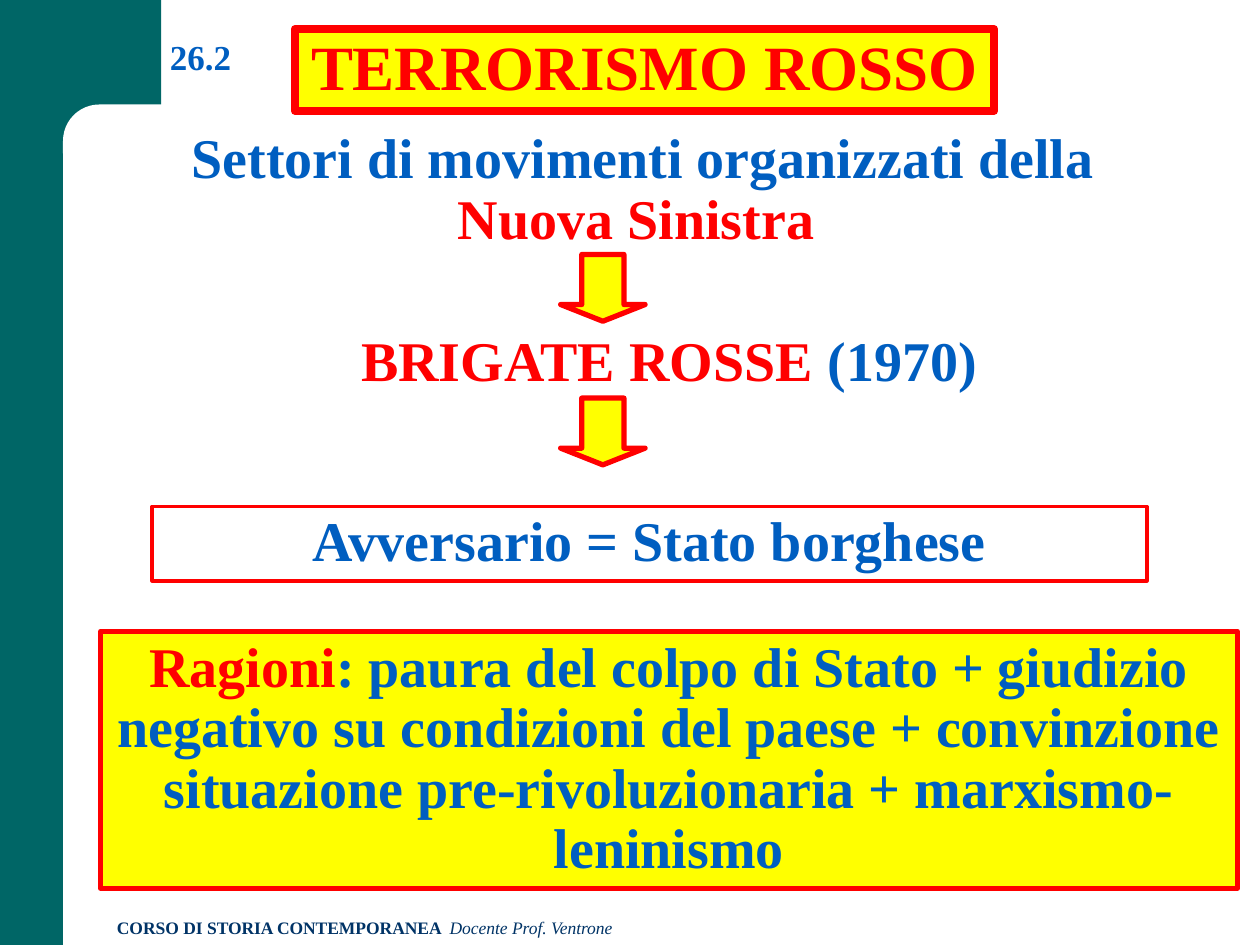
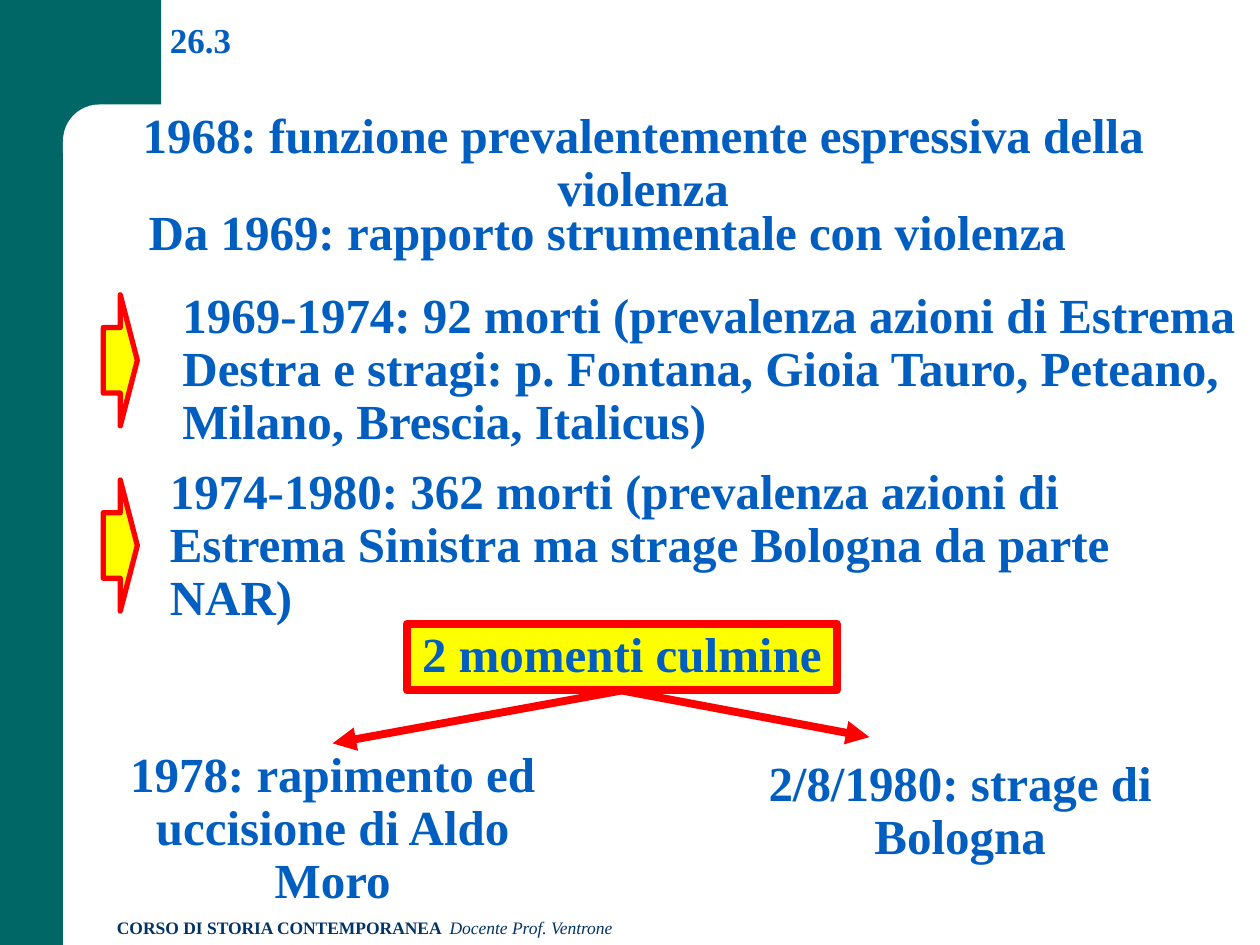
from dataclasses import dataclass

from lxml.etree import SubElement
from pptx import Presentation
from pptx.dml.color import RGBColor
from pptx.enum.shapes import MSO_CONNECTOR, MSO_SHAPE
from pptx.enum.text import MSO_ANCHOR, MSO_AUTO_SIZE, PP_ALIGN
from pptx.oxml.ns import qn
from pptx.util import Inches, Pt


@dataclass(frozen=True)
class Theme:
    font: str = "Times New Roman"
    white: str = "FFFFFF"
    teal: str = "006666"
    navy: str = "003366"
    blue: str = "005EC0"
    red: str = "FF0000"
    yellow: str = "FFFF00"
    title: int = 36
    large: int = 32
    body: int = 28
    number: int = 20
    footer: int = 10
    thin: float = 2.25
    medium: float = 3
    thick: float = 4.5


TITLE_ONLY, BLANK = 5, 6
BOTTOM, TOP = 2, 0


def rgb(colour):
    return RGBColor.from_string(colour)


class Deck:
    def __init__(self, theme):
        self.theme = theme
        self.presentation = Presentation()
        self.presentation.slide_width = Inches(10)
        self.presentation.slide_height = Inches(7.5)
        self.slide = None

    def new_slide(self, layout, number, number_box):
        layouts = self.presentation.slide_layouts
        self.slide = self.presentation.slides.add_slide(layouts[layout])
        self.frame()
        self.footer()
        self.text(number_box, [(number, self.theme.blue)], self.theme.number,
                  align=PP_ALIGN.LEFT, anchor=MSO_ANCHOR.TOP, spacing=1.0)

    # Shared parts
    def frame(self):
        t = self.theme
        self.shape((0, 0, 0.5, 7.5), fill=t.teal)
        self.shape((0, 0, 1.28, 1.17), fill=t.teal)
        self.shape((0.5, 0.83, 5.92, 0.67), MSO_SHAPE.ROUNDED_RECTANGLE,
                   fill=t.white, adjustments=[0.43])

    def footer(self):
        t = self.theme
        course = self.text((0.83, 7.23, 6.17, 0.27), [], t.footer,
                           align=PP_ALIGN.LEFT, anchor=MSO_ANCHOR.TOP, spacing=1.0)
        paragraph = course.text_frame.paragraphs[0]
        stops = SubElement(paragraph._p.get_or_add_pPr(), qn("a:tabLst"))
        SubElement(stops, qn("a:tab"), pos=str(Inches(2.64)), algn="l")
        self.run(paragraph, "CORSO DI STORIA CONTEMPORANEA\t", t.navy, t.footer)
        teacher = self.run(paragraph, "Docente Prof. Ventrone", t.navy, t.footer)
        teacher.font.bold, teacher.font.italic = False, True

    # Text
    def run(self, paragraph, text, colour, size):
        run = paragraph.add_run()
        run.text = text
        run.font.name = self.theme.font
        run.font.size = Pt(size)
        run.font.bold = True
        run.font.color.rgb = rgb(colour)
        return run

    def fill_text(self, holder, runs, size, align=PP_ALIGN.CENTER,
                  anchor=MSO_ANCHOR.MIDDLE, spacing=0.9, wrap=True):
        frame = holder.text_frame
        frame.auto_size = MSO_AUTO_SIZE.NONE
        frame.word_wrap = wrap
        frame.vertical_anchor = anchor
        paragraph = frame.paragraphs[0]
        paragraph.alignment = align
        paragraph.line_spacing = spacing
        for text, colour in runs:
            self.run(paragraph, text, colour, size)
        return holder

    def text(self, box, runs, size, **options):
        holder = self.slide.shapes.add_textbox(*map(Inches, box))
        return self.fill_text(holder, runs, size, **options)

    def title(self, box, text):
        t = self.theme
        title = self.slide.shapes.title
        title.left, title.top, title.width, title.height = map(Inches, box)
        self.paint(title, t.yellow, t.red, t.thick)
        self.fill_text(title, [(text, t.red)], t.title, wrap=False)
        # The title lies above the frame
        self.slide.shapes._spTree.append(title._element)

    # Shapes
    def paint(self, shape, fill, line, width):
        if fill:
            shape.fill.solid()
            shape.fill.fore_color.rgb = rgb(fill)
        else:
            shape.fill.background()
        if line:
            shape.line.color.rgb = rgb(line)
            shape.line.width = Pt(width)
        else:
            shape.line.fill.background()

    def shape(self, box, kind=MSO_SHAPE.RECTANGLE, fill=None, line=None,
              width=0, adjustments=()):
        shape = self.slide.shapes.add_shape(kind, *map(Inches, box))
        shape.shadow.inherit = False
        for index, value in enumerate(adjustments):
            shape.adjustments[index] = value
        self.paint(shape, fill, line, width)
        return shape

    def panel(self, box, runs, size, fill, width, **options):
        panel = self.shape(box, fill=fill, line=self.theme.red, width=width)
        return self.fill_text(panel, runs, size, **options)

    def block_arrow(self, box, kind, adjustments):
        t = self.theme
        self.shape(box, kind, t.yellow, t.red, t.medium, adjustments)

    def arrow(self, source, end, target=None):
        link = self.slide.shapes.add_connector(
            MSO_CONNECTOR.STRAIGHT, 0, 0, *map(Inches, end))
        link.begin_connect(source, BOTTOM)
        if target is not None:
            link.end_connect(target, TOP)
        link.line.color.rgb = rgb(self.theme.red)
        link.line.width = Pt(self.theme.thick)
        SubElement(link.line._get_or_add_ln(), qn("a:tailEnd"), type="triangle")
        SubElement(link._element.spPr, qn("a:effectLst"))


def red_terrorism(deck):
    t = deck.theme
    deck.new_slide(TITLE_ONLY, "26.2", (1.25, 0.23, 0.86, 0.44))
    deck.title((2.34, 0.23, 5.55, 0.65), "TERRORISMO ROSSO")

    # From the movements to the Red Brigades
    deck.text((1.09, 0.98, 8.03, 1.07),
              [("Settori di movimenti organizzati della ", t.blue),
               ("Nuova Sinistra ", t.red)], t.large)
    deck.text((1.56, 2.59, 7.5, 0.59),
              [("BRIGATE ROSSE ", t.red), ("(1970)", t.blue)], t.large)
    for top in (2.02, 3.16):
        deck.block_arrow((4.45, top, 0.67, 0.53), MSO_SHAPE.DOWN_ARROW, (0.5, 0.25))

    # Adversary and reasons
    deck.panel((1.21, 4.02, 7.89, 0.59),
               [("Avversario = Stato borghese", t.blue)], t.large, None, t.thin)
    deck.panel((0.8, 5.01, 9.02, 2.04),
               [("Ragioni", t.red),
                (": paura del colpo di Stato + giudizio negativo su condizioni "
                 "del paese + convinzione situazione pre-rivoluzionaria + "
                 "marxismo-leninismo", t.blue)],
               t.large, t.yellow, t.medium)


def violence(deck):
    t = deck.theme
    deck.new_slide(BLANK, "26.3", (1.25, 0.1, 1.23, 0.44))

    def statement(box, text, align=PP_ALIGN.CENTER):
        return deck.text(box, [(text, t.blue)], t.body, align=align)

    # Function of violence
    statement((0.82, 0.83, 8.57, 0.95),
              "1968: funzione prevalentemente espressiva della violenza")
    statement((0.35, 1.6, 8.94, 0.53), "Da 1969: rapporto strumentale con violenza")

    # Two periods
    statement((1.35, 2.26, 8.67, 1.37),
              "1969-1974: 92 morti (prevalenza azioni di Estrema Destra e stragi: "
              "p. Fontana, Gioia Tauro, Peteano, Milano, Brescia, Italicus)",
              PP_ALIGN.LEFT)
    statement((1.25, 3.65, 8.52, 1.37),
              "1974-1980: 362 morti (prevalenza azioni di Estrema Sinistra "
              "ma strage Bologna da parte NAR)", PP_ALIGN.LEFT)
    for top in (2.34, 3.81):
        deck.block_arrow((0.82, top, 0.27, 1.04), MSO_SHAPE.RIGHT_ARROW, (0.5, 0.5))

    # Two climaxes
    climaxes = deck.panel((3.23, 4.95, 3.41, 0.53), [("2 momenti culmine", t.blue)],
                          t.body, t.yellow, t.thick, wrap=False)
    moro = statement((0.83, 5.9, 3.62, 1.37),
                     "1978: rapimento ed uccisione di Aldo Moro")
    statement((5.62, 5.97, 4, 0.95), "2/8/1980: strage di Bologna")
    deck.arrow(climaxes, (2.64, 5.9), moro)
    deck.arrow(climaxes, (6.9, 5.85))


def main():
    deck = Deck(Theme())
    red_terrorism(deck)
    violence(deck)
    deck.presentation.save("out.pptx")


if __name__ == "__main__":
    main()
